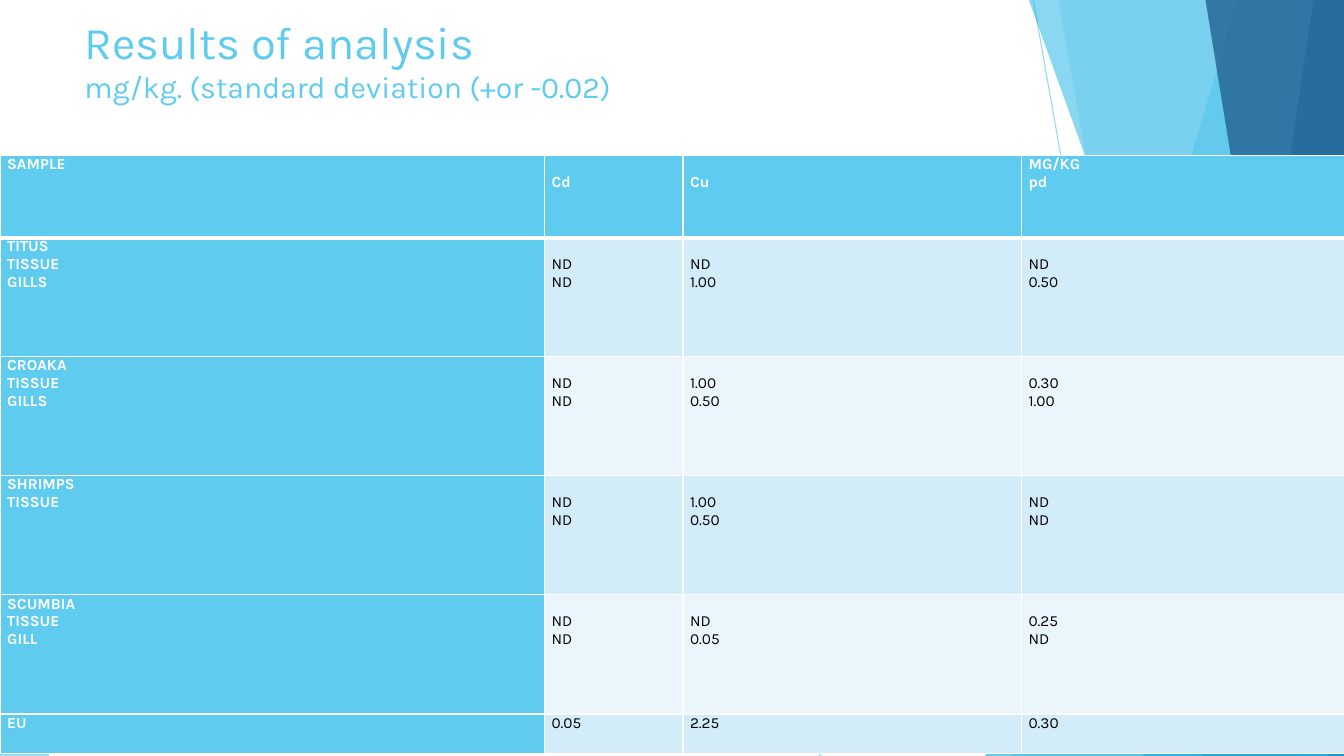
from lxml.etree import SubElement
from pptx import Presentation
from pptx.dml.color import RGBColor
from pptx.enum.shapes import MSO_CONNECTOR, MSO_SHAPE
from pptx.enum.text import MSO_ANCHOR
from pptx.oxml import parse_xml
from pptx.oxml.ns import nsdecls, qn
from pptx.util import Cm, Pt

SKY = RGBColor(0x5F, 0xCB, 0xEF)
CYAN = RGBColor(0x17, 0xB0, 0xE4)
BLUE = RGBColor(0x2E, 0x83, 0xC3)
NAVY = RGBColor(0x22, 0x62, 0x92)
BAND_DARK = RGBColor(0xD2, 0xEC, 0xF9)
BAND_LIGHT = RGBColor(0xEA, 0xF6, 0xFC)
WHITE = RGBColor(0xFF, 0xFF, 0xFF)
BLACK = RGBColor(0, 0, 0)
FONT = "Karla"

SLIDE_WIDTH, SLIDE_HEIGHT = Cm(33.87), Cm(19.05)
TEXT_LINE = Cm(0.45)

COLUMN_WIDTHS = [13.72, 3.49, 8.53, 8.53]
ROW_HEIGHTS = [2.08, 3.0, 3.0, 3.0, 3.0, 1.0]
HEADER = ["SAMPLE", "Cd", "Cu", "MG/KG\npd"]
RESULTS = [
    ["TITUS\nTISSUE\nGILLS", "ND\nND", "ND\n1.00", "ND\n0.50"],
    ["CROAKA\nTISSUE\nGILLS", "ND\nND", "1.00\n0.50", "0.30\n1.00"],
    ["SHRIMPS\nTISSUE", "ND\nND", "1.00\n0.50", "ND\nND"],
    ["SCUMBIA\nTISSUE\nGILL", "ND\nND", "ND\n0.05", "0.25\nND"],
    ["EU", "0.05", "2.25", "0.30"],
]


def set_opacity(fill_parent, percent):
    color = fill_parent.find(f"{qn('a:solidFill')}/{qn('a:srgbClr')}")
    SubElement(color, qn("a:alpha"), val=str(percent * 1000))


def paint(facet, color, opacity):
    facet.shadow.inherit = False
    facet.fill.solid()
    facet.fill.fore_color.rgb = color
    set_opacity(facet._element.spPr, opacity)
    facet.line.fill.background()


def add_ray(slide, start, end):
    ray = slide.shapes.add_connector(MSO_CONNECTOR.STRAIGHT, *start, *end)
    ray.line.color.rgb = SKY
    ray.line.width = Pt(0.75)
    set_opacity(ray.line._ln, 70)
    SubElement(ray._element.spPr, qn("a:effectLst"))


def add_panel(slide, box, top_x, bottom_x, color, opacity):
    """Four-sided panel from a slanted left edge to the right edge of the box."""
    left, top, width, height = box
    right, bottom = left + width, top + height
    outline = slide.shapes.build_freeform(left + Cm(top_x), top)
    outline.add_line_segments(
        [(right, top), (right, bottom), (left + Cm(bottom_x), bottom)])
    paint(outline.convert_to_shape(), color, opacity)


def add_corner(slide, box, x, y, width, apex, color, opacity):
    """Triangle that stands on the bottom edge of the box."""
    left, top, _, height = box
    corner = slide.shapes.add_shape(
        MSO_SHAPE.ISOSCELES_TRIANGLE, left + Cm(x), top + Cm(y),
        Cm(width), height - Cm(y))
    corner.adjustments[0] = apex
    paint(corner, color, opacity)


def add_backdrop(slide, box):
    left, top, width, height = box
    bottom = top + height
    add_ray(slide, (left + Cm(26.04), top), (left + Cm(29.41), bottom))
    add_ray(slide, (left + width, top + Cm(10.24)), (left + Cm(20.62), bottom))
    add_panel(slide, box, 31.19, 25.5, SKY, 36)
    add_panel(slide, box, 26.67, 30.05, SKY, 20)
    add_corner(slide, box, 24.82, 8.46, 9.05, 1, CYAN, 66)
    add_panel(slide, box, 25.93, 32.79, CYAN, 50)
    add_panel(slide, box, 33.1, 30.28, BLUE, 70)
    add_panel(slide, box, 30.38, 33.48, NAVY, 80)
    add_corner(slide, box, 28.8, 9.98, 5.07, 1, CYAN, 66)
    add_corner(slide, box, 0, 11.15, 1.24, 0, SKY, 70)


def add_title(slide, box):
    frame = slide.shapes.add_textbox(*box).text_frame
    frame.word_wrap = True
    frame.vertical_anchor = MSO_ANCHOR.TOP
    frame.text = "Results of analysis\nmg/kg. (standard deviation (+or -0.02)"
    for paragraph, size in zip(frame.paragraphs, (32.4, 21.6)):
        paragraph.font.name = FONT
        paragraph.font.size = Pt(size)
        paragraph.font.color.rgb = SKY


def set_borders(cell, top_width, bottom_width):
    properties = cell._tc.get_or_add_tcPr()
    sides = {"lnL": 1, "lnR": 1, "lnT": top_width, "lnB": bottom_width}
    for position, (side, width) in enumerate(sides.items()):
        properties.insert(position, parse_xml(
            f'<a:{side} {nsdecls("a")} w="{Pt(width)}"><a:solidFill>'
            f'<a:srgbClr val="{WHITE}"/></a:solidFill></a:{side}>'))


def fill_cell(cell, text, fill, color, bold, margin_top):
    cell.margin_left = cell.margin_right = Cm(0.18)
    cell.margin_top, cell.margin_bottom = margin_top, 0
    cell.fill.solid()
    cell.fill.fore_color.rgb = fill
    cell.text = text
    for paragraph in cell.text_frame.paragraphs:
        paragraph.font.name = FONT
        paragraph.font.size = Pt(11)
        paragraph.font.bold = bold
        paragraph.font.color.rgb = color


def add_results_table(slide, box):
    rows = [HEADER] + RESULTS
    table = slide.shapes.add_table(len(rows), len(HEADER), *box).table
    table.first_col = True
    for column, width in zip(table.columns, COLUMN_WIDTHS):
        column.width = Cm(width)
    for r, (row, height) in enumerate(zip(rows, ROW_HEIGHTS)):
        table.rows[r].height = Cm(height)
        for c, text in enumerate(row):
            heading = r == 0 or c == 0
            band = BAND_DARK if r % 2 else BAND_LIGHT
            # Values start one line down, level with the tissue row
            lowered = c > 0 and text != "MG/KG\npd" and r < len(rows) - 1
            cell = table.cell(r, c)
            fill_cell(cell, text, SKY if heading else band,
                      WHITE if heading else BLACK, heading,
                      TEXT_LINE if lowered else 0)
            set_borders(cell, 3 if r == 1 else 1, 3 if r == 0 else 1)


def main():
    presentation = Presentation()
    presentation.slide_width = SLIDE_WIDTH
    presentation.slide_height = SLIDE_HEIGHT
    slide = presentation.slides.add_slide(presentation.slide_layouts[6])
    add_backdrop(slide, (0, 0, SLIDE_WIDTH, SLIDE_HEIGHT))
    add_title(slide, (Cm(1.88), Cm(0.22), Cm(23.88), Cm(2.78)))
    add_results_table(
        slide, (0, Cm(3.91), Cm(sum(COLUMN_WIDTHS)), Cm(sum(ROW_HEIGHTS))))
    presentation.save("out.pptx")


if __name__ == "__main__":
    main()
